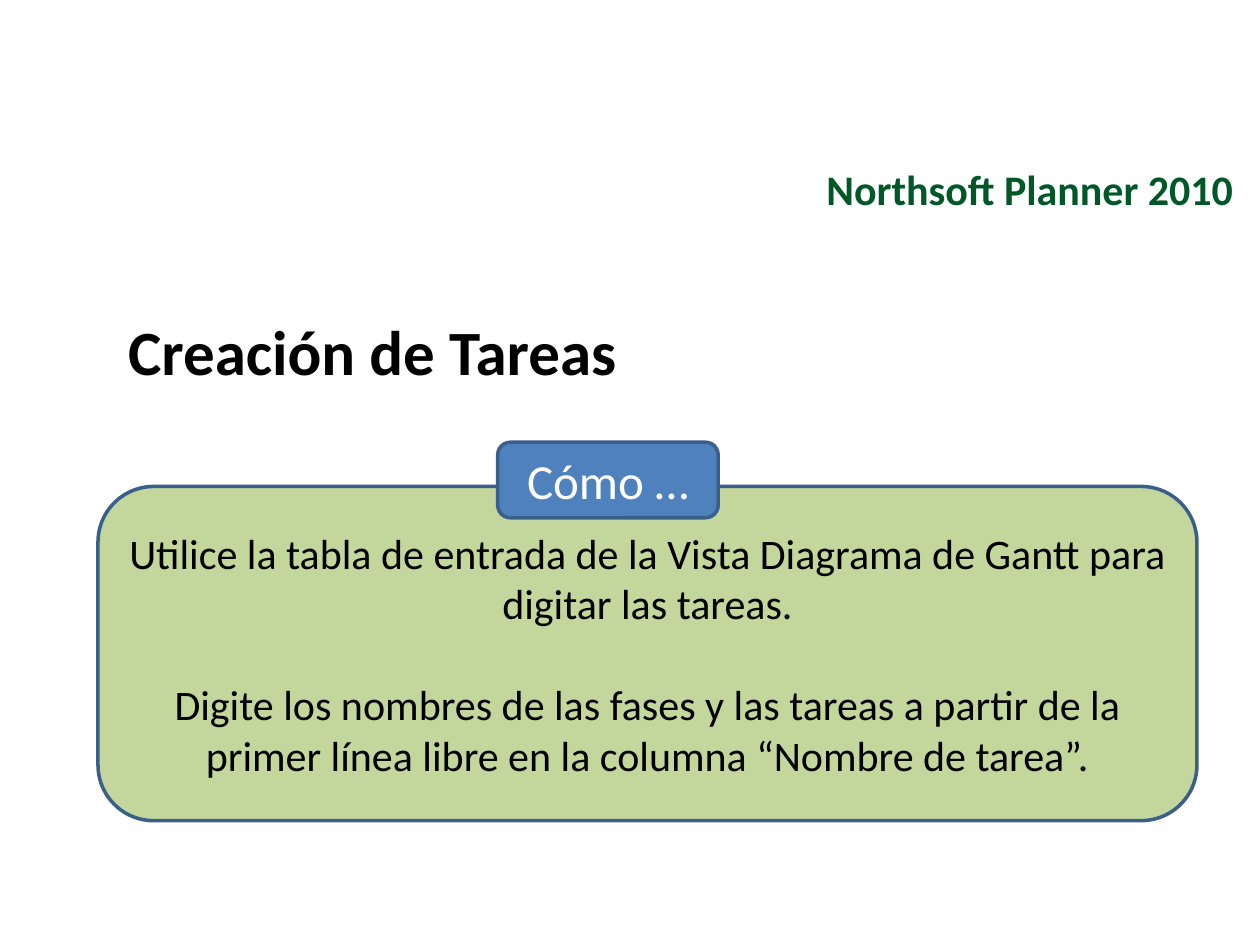
from lxml import etree
from pptx import Presentation
from pptx.dml.color import RGBColor
from pptx.enum.shapes import MSO_SHAPE
from pptx.enum.text import MSO_ANCHOR, MSO_AUTO_SIZE, PP_ALIGN
from pptx.oxml.ns import qn
from pptx.util import Pt

ROUNDED = MSO_SHAPE.ROUNDED_RECTANGLE
TOP, MIDDLE = MSO_ANCHOR.TOP, MSO_ANCHOR.MIDDLE
LEFT, CENTER, RIGHT = PP_ALIGN.LEFT, PP_ALIGN.CENTER, PP_ALIGN.RIGHT
NO_AUTOFIT = MSO_AUTO_SIZE.NONE

COLORS = {
    "heading": "005828",
    "text": "000000",
    "panel": "C3D69B",
    "label": "4F81BD",
    "label_text": "FFFFFF",
    "outline": "3A5F8C",
}


def color(name):
    return RGBColor.from_string(COLORS[name])


class SlideBuilder:
    font_name = "Calibri"
    line_width = Pt(2)

    def __init__(self, slide):
        self.slide = slide

    def set_text(self, shape, *texts, size=24, ink="text", bold=False,
                 align=CENTER, anchor=MIDDLE, gap=0, indent=None):
        """Fill a shape with paragraphs, gap points apart."""
        frame = shape.text_frame
        frame.word_wrap = True
        frame.auto_size = NO_AUTOFIT
        frame.vertical_anchor = anchor
        for number, text in enumerate(texts):
            para = frame.add_paragraph() if number else frame.paragraphs[0]
            para.alignment = align
            para.space_before = Pt(gap if number else 0)
            if indent is not None:
                properties = para._p.get_or_add_pPr()
                properties.set("marL", str(Pt(indent)))
                properties.set("indent", "0")
                etree.SubElement(properties, qn("a:buNone"))
            span = para.add_run()
            span.text = text
            span.font.name = self.font_name
            span.font.size = Pt(size)
            span.font.bold = bold
            span.font.color.rgb = color(ink)

    def placeholder(self, holder, bounds, text, **style):
        holder.left, holder.top, holder.width, holder.height = map(Pt, bounds)
        self.set_text(holder, text, **style)

    def group(self):
        return self.slide.shapes.add_group_shape()

    def rounded_box(self, group, bounds, fill, *texts, **style):
        box = group.shapes.add_shape(ROUNDED, *map(Pt, bounds))
        box.shadow.inherit = False
        box.fill.solid()
        box.fill.fore_color.rgb = color(fill)
        box.line.color.rgb = color("outline")
        box.line.width = self.line_width
        self.set_text(box, *texts, **style)


def main():
    deck = Presentation()
    deck.slide_width, deck.slide_height = Pt(720), Pt(540)
    page = deck.slides.add_slide(deck.slide_layouts[1])
    builder = SlideBuilder(page)

    builder.placeholder(page.shapes.title, (388, 83, 324, 50),
                        "Northsoft Planner 2010",
                        ink="heading", bold=True, align=RIGHT)
    builder.placeholder(page.placeholders[1], (30, 175, 654, 88),
                        "Creación de Tareas", size=36, bold=True,
                        align=LEFT, anchor=TOP, indent=36)

    how_to = builder.group()
    builder.rounded_box(
        how_to, (56, 278, 628, 191), "panel",
        "Utilice la tabla de entrada de la Vista Diagrama de Gantt para "
        "digitar las tareas.",
        "Digite los nombres de las fases y las tareas a partir de la "
        "primer línea libre en la columna “Nombre de tarea”.",
        gap=29)
    builder.rounded_box(how_to, (284.4, 252.7, 126, 43.2), "label", "Cómo …",
                        size=28, ink="label_text")

    deck.save("out.pptx")


if __name__ == "__main__":
    main()
